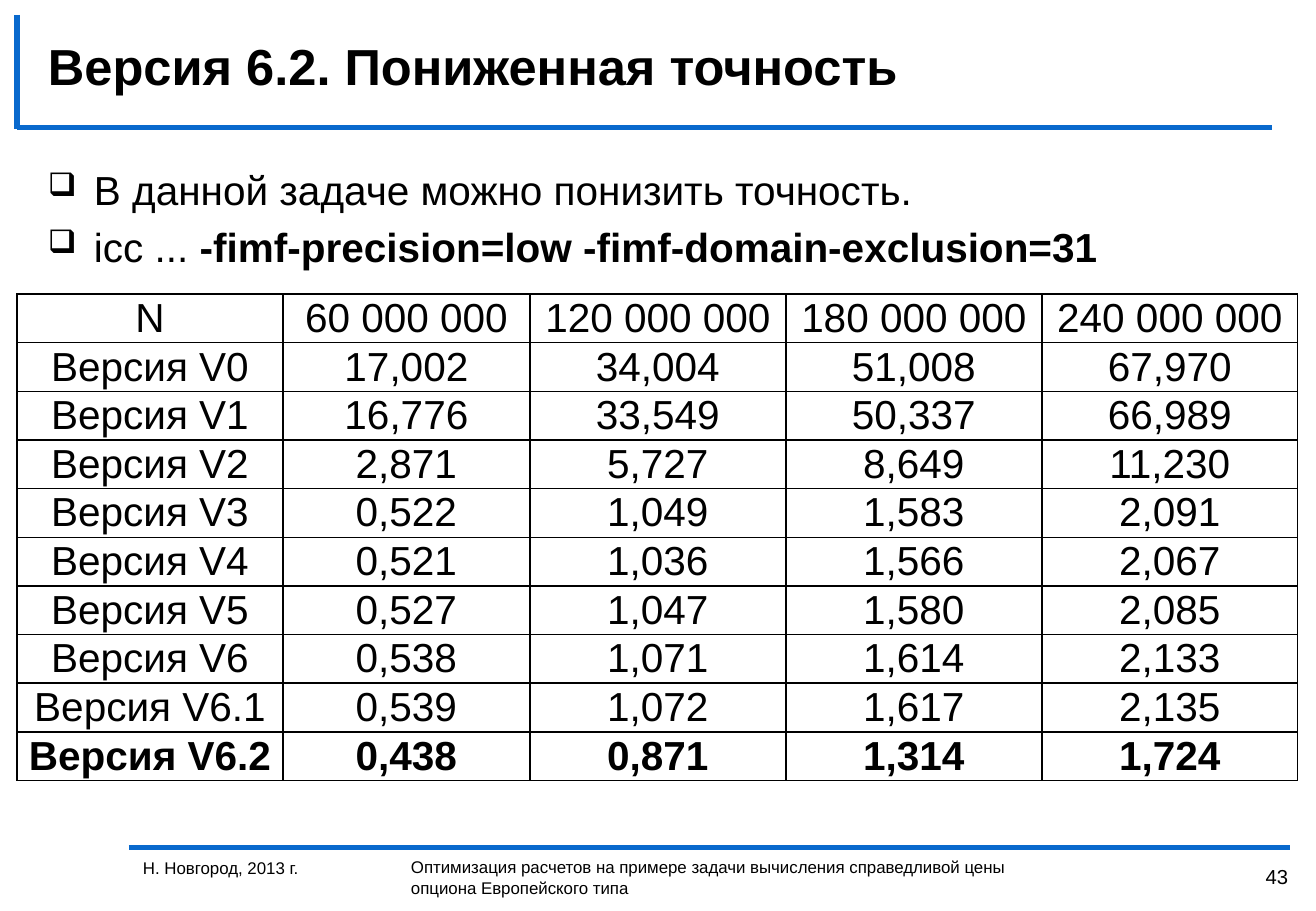
from dataclasses import dataclass

from lxml import etree
from pptx import Presentation
from pptx.dml.color import RGBColor
from pptx.enum.shapes import MSO_CONNECTOR
from pptx.enum.text import MSO_ANCHOR, PP_ALIGN
from pptx.oxml import parse_xml
from pptx.oxml.ns import nsdecls, qn
from pptx.slide import Slide
from pptx.table import _Cell
from pptx.text.text import TextFrame, _Paragraph
from pptx.util import Emu, Pt

EMU_PER_PX = 7526
LEFT, CENTER, RIGHT = PP_ALIGN.LEFT, PP_ALIGN.CENTER, PP_ALIGN.RIGHT
TOP, MIDDLE = MSO_ANCHOR.TOP, MSO_ANCHOR.MIDDLE
STRAIGHT = MSO_CONNECTOR.STRAIGHT


@dataclass(frozen=True)
class Theme:
    font: str = "Arial"
    ink: str = "000000"
    accent: str = "0969CD"
    title_size: int = 30
    body_size: int = 24
    number_size: int = 12
    footer_size: int = 10
    rule_width: int = 3
    border_width: int = 1


THEME = Theme()


@dataclass(frozen=True)
class Rule:
    x1: int
    y1: int
    x2: int
    y2: int


@dataclass(frozen=True)
class Span:
    text: str
    bold: bool = False


@dataclass(frozen=True)
class Label:
    text: str
    left: int
    top: int
    width: int
    height: int
    size: int
    align: PP_ALIGN = LEFT
    anchor: MSO_ANCHOR = TOP
    bold: bool = False


RULES = [
    Rule(129, 848, 1290, 848),
    Rule(17, 128, 1272, 128),
    Rule(17, 15, 17, 129),
]

LABELS = [
    Label("Версия 6.2. Пониженная точность", 36, 28, 1254, 74,
          THEME.title_size, anchor=MIDDLE, bold=True),
    Label("Н. Новгород, 2013 г.", 131, 852, 255, 57, THEME.footer_size),
    Label("Оптимизация расчетов на примере задачи вычисления справедливой цены "
          "опциона Европейского типа", 399, 851, 639, 53, THEME.footer_size),
    Label("43", 1233, 858, 67, 38, THEME.number_size, align=RIGHT),
]

BULLETS = [
    [Span("В данной задаче можно понизить точность.")],
    [Span("icc ... "), Span("-fimf-precision=low -fimf-domain-exclusion=31", True)],
]
BULLET_INDENT = 46
BULLET_GAP = Pt(4.8)

TIMINGS = [
    ("N", "60 000 000", "120 000 000", "180 000 000", "240 000 000"),
    ("Версия V0", "17,002", "34,004", "51,008", "67,970"),
    ("Версия V1", "16,776", "33,549", "50,337", "66,989"),
    ("Версия V2", "2,871", "5,727", "8,649", "11,230"),
    ("Версия V3", "0,522", "1,049", "1,583", "2,091"),
    ("Версия V4", "0,521", "1,036", "1,566", "2,067"),
    ("Версия V5", "0,527", "1,047", "1,580", "2,085"),
    ("Версия V6", "0,538", "1,071", "1,614", "2,133"),
    ("Версия V6.1", "0,539", "1,072", "1,617", "2,135"),
    ("Версия V6.2", "0,438", "0,871", "1,314", "1,724"),
]
COLUMN_WIDTHS = [266, 247, 256, 256, 256]
ROW_HEIGHT = 45
CELL_MARGIN = 8


def px(length: int) -> Emu:
    return Emu(length * EMU_PER_PX)


def style_runs(para: _Paragraph, size: int, bold: bool = False) -> None:
    for run in para.runs:
        run.font.name = THEME.font
        run.font.size = Pt(size)
        run.font.bold = bold
        run.font.color.rgb = RGBColor.from_string(THEME.ink)


def add_rule(page: Slide, rule: Rule) -> None:
    line = page.shapes.add_connector(
        STRAIGHT, px(rule.x1), px(rule.y1), px(rule.x2), px(rule.y2))
    line.line.color.rgb = RGBColor.from_string(THEME.accent)
    line.line.width = Pt(THEME.rule_width)
    etree.SubElement(line._element.spPr, qn("a:effectLst"))


def add_frame(page: Slide, left: int, top: int, width: int, height: int) -> TextFrame:
    box = page.shapes.add_textbox(px(left), px(top), px(width), px(height))
    box.text_frame.word_wrap = True
    return box.text_frame


def add_label(page: Slide, label: Label) -> None:
    frame = add_frame(page, label.left, label.top, label.width, label.height)
    frame.vertical_anchor = label.anchor
    frame.text = label.text
    para = frame.paragraphs[0]
    para.alignment = label.align
    style_runs(para, label.size, label.bold)


def set_bullet(para: _Paragraph) -> None:
    properties = para._p.get_or_add_pPr()
    properties.set("marL", str(px(BULLET_INDENT)))
    properties.set("indent", str(-px(BULLET_INDENT)))
    etree.SubElement(properties, qn("a:buSzPct"), val="80000")
    etree.SubElement(properties, qn("a:buChar"), char="❑")


def add_bullets(page: Slide) -> None:
    frame = add_frame(page, 36, 159, 1254, 124)
    for index, spans in enumerate(BULLETS):
        para = frame.add_paragraph() if index else frame.paragraphs[0]
        set_bullet(para)
        if index:
            para.space_before = BULLET_GAP
        for span in spans:
            para.add_run().text = span.text
        style_runs(para, THEME.body_size)
        for run, span in zip(para.runs, spans):
            run.font.bold = span.bold


def set_borders(cell: _Cell) -> None:
    properties = cell._tc.get_or_add_tcPr()
    for side in ("lnL", "lnR", "lnT", "lnB"):
        properties.append(parse_xml(
            f'<a:{side} {nsdecls("a")} w="{Pt(THEME.border_width)}"><a:solidFill>'
            f'<a:srgbClr val="{THEME.ink}"/></a:solidFill></a:{side}>'))


def fill_cell(cell: _Cell, text: str, bold: bool) -> None:
    set_borders(cell)
    cell.fill.background()
    cell.margin_left = cell.margin_right = px(CELL_MARGIN)
    cell.margin_top = cell.margin_bottom = 0
    cell.vertical_anchor = MIDDLE
    cell.text_frame.text = text
    para = cell.text_frame.paragraphs[0]
    para.alignment = CENTER
    style_runs(para, THEME.body_size, bold)


def add_timings(page: Slide) -> None:
    """Draw the run times, with the newest version in bold."""
    table = page.shapes.add_table(
        len(TIMINGS), len(COLUMN_WIDTHS), px(17), px(294),
        px(sum(COLUMN_WIDTHS)), px(ROW_HEIGHT * len(TIMINGS))).table
    table.first_row = table.horz_banding = False
    for column, width in zip(table.columns, COLUMN_WIDTHS):
        column.width = px(width)
    for row, values in zip(table.rows, TIMINGS):
        row.height = px(ROW_HEIGHT)
        for cell, text in zip(row.cells, values):
            fill_cell(cell, text, bold=values is TIMINGS[-1])


def main() -> None:
    deck = Presentation()
    deck.slide_width, deck.slide_height = px(1316), px(911)
    page = deck.slides.add_slide(deck.slide_layouts[6])
    for rule in RULES:
        add_rule(page, rule)
    for label in LABELS:
        add_label(page, label)
    add_bullets(page)
    add_timings(page)
    deck.save("out.pptx")


if __name__ == "__main__":
    main()
